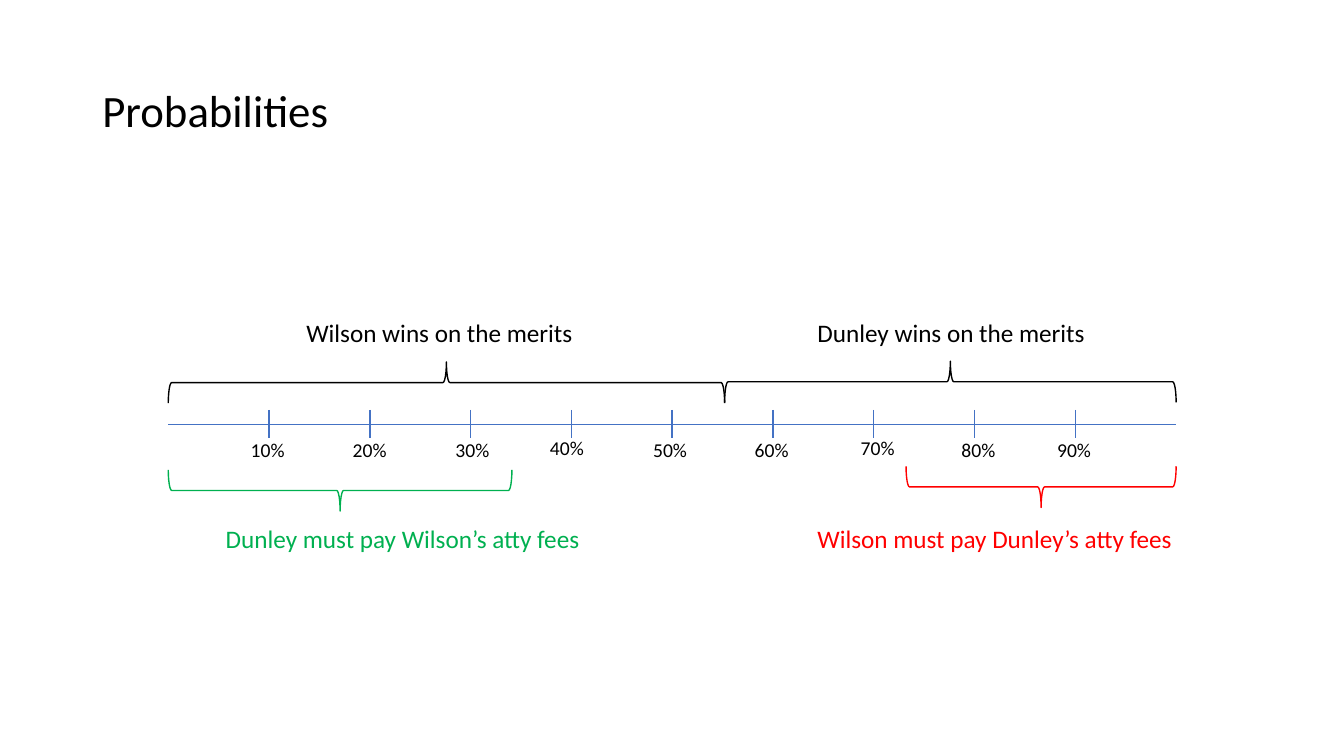
import pptx
import pptx.util
import pptx.dml.color
import pptx.enum.shapes
import pptx.enum.text
from pptx.oxml.ns import qn
from lxml import etree

Cm, Pt = pptx.util.Cm, pptx.util.Pt
BLACK, BLUE, GREEN, RED = "000000", "4472C4", "00B050", "FF0000"

# Content: positions in cm, ranges in percent of the axis
TITLE = "Probabilities"
AXIS_LEFT, AXIS_Y, AXIS_LENGTH = 4.24, 10.69, 25.4
TICK_HALF = 0.36
BRACE_DEPTH = 1.04
# percent, left, top
TICK_LABELS = [
    (10, 6.07, 10.9), (20, 8.64, 10.9), (30, 11.23, 10.9),
    (40, 13.61, 10.87), (50, 16.21, 10.9), (60, 18.77, 10.92),
    (70, 21.44, 10.87), (80, 23.98, 10.9), (90, 26.39, 10.9),
]
# from, to, top, rotation, colour
BRACES = [
    (0, 55.2, 9.12, 270, BLACK),
    (55.2, 100, 9.1, 270, BLACK),
    (0, 34.1, 11.84, 90, GREEN),
    (73.2, 100, 11.75, 90, RED),
]
# text, left, top, width, colour
OUTCOMES = [
    ("Wilson wins on the merits", 7.47, 7.87, 7.29, BLACK),
    ("Dunley wins on the merits", 20.35, 7.87, 7.24, BLACK),
    ("Dunley must pay Wilson’s atty fees", 5.44, 13.06, 9.45, GREEN),
    ("Wilson must pay Dunley’s atty fees", 20.35, 13.06, 9.47, RED),
]


def rgb(colour):
    return pptx.dml.color.RGBColor.from_string(colour)


def axis_x(percent):
    return AXIS_LEFT + AXIS_LENGTH * percent / 100


def add_text(s, text, left, top, width, height, size, colour=BLACK, wrap=False):
    sp = s.shapes.add_textbox(Cm(left), Cm(top), Cm(width), Cm(height))
    tf = sp.text_frame
    tf.word_wrap = wrap
    r = tf.paragraphs[0].add_run()
    r.text = text
    r.font.name = "Calibri"
    r.font.size = Pt(size)
    r.font.color.rgb = rgb(colour)
    return tf


def add_line(s, x1, y1, x2, y2):
    line = s.shapes.add_connector(
        pptx.enum.shapes.MSO_CONNECTOR.STRAIGHT, Cm(x1), Cm(y1), Cm(x2), Cm(y2))
    line.line.color.rgb = rgb(BLUE)
    line.line.width = Pt(1)
    etree.SubElement(line._element.spPr, qn("a:effectLst"))


def add_brace(s, start, end, top, rotation, colour):
    # The unrotated brace is upright and shares its centre with the turned one
    length = axis_x(end) - axis_x(start)
    centre_x = axis_x((start + end) / 2)
    centre_y = top + BRACE_DEPTH / 2
    sp = s.shapes.add_shape(
        pptx.enum.shapes.MSO_SHAPE.RIGHT_BRACE,
        Cm(centre_x - BRACE_DEPTH / 2), Cm(centre_y - length / 2),
        Cm(BRACE_DEPTH), Cm(length))
    sp.rotation = rotation
    sp.shadow.inherit = False
    sp.fill.background()
    sp.line.color.rgb = rgb(colour)
    sp.line.width = Pt(1)


prs = pptx.Presentation()
prs.slide_width, prs.slide_height = Cm(33.87), Cm(19.05)
s = prs.slides.add_slide(prs.slide_layouts[6])

# Title
tf = add_text(s, TITLE, 2.33, 1.01, 29.21, 3.68, 32, wrap=True)
tf.vertical_anchor = pptx.enum.text.MSO_ANCHOR.MIDDLE
tf.paragraphs[0].line_spacing = 0.9

# Axis with ticks
add_line(s, axis_x(0), AXIS_Y, axis_x(100), AXIS_Y)
for percent, left, top in TICK_LABELS:
    x = axis_x(percent)
    add_line(s, x, AXIS_Y - TICK_HALF, x, AXIS_Y + TICK_HALF)
    add_text(s, f"{percent}%", left, top, 1.37, 0.86, 14)

# Braces and outcomes
for brace in BRACES:
    add_brace(s, *brace)
for text, left, top, width, colour in OUTCOMES:
    add_text(s, text, left, top, width, 1.02, 18, colour)

prs.save("out.pptx")
